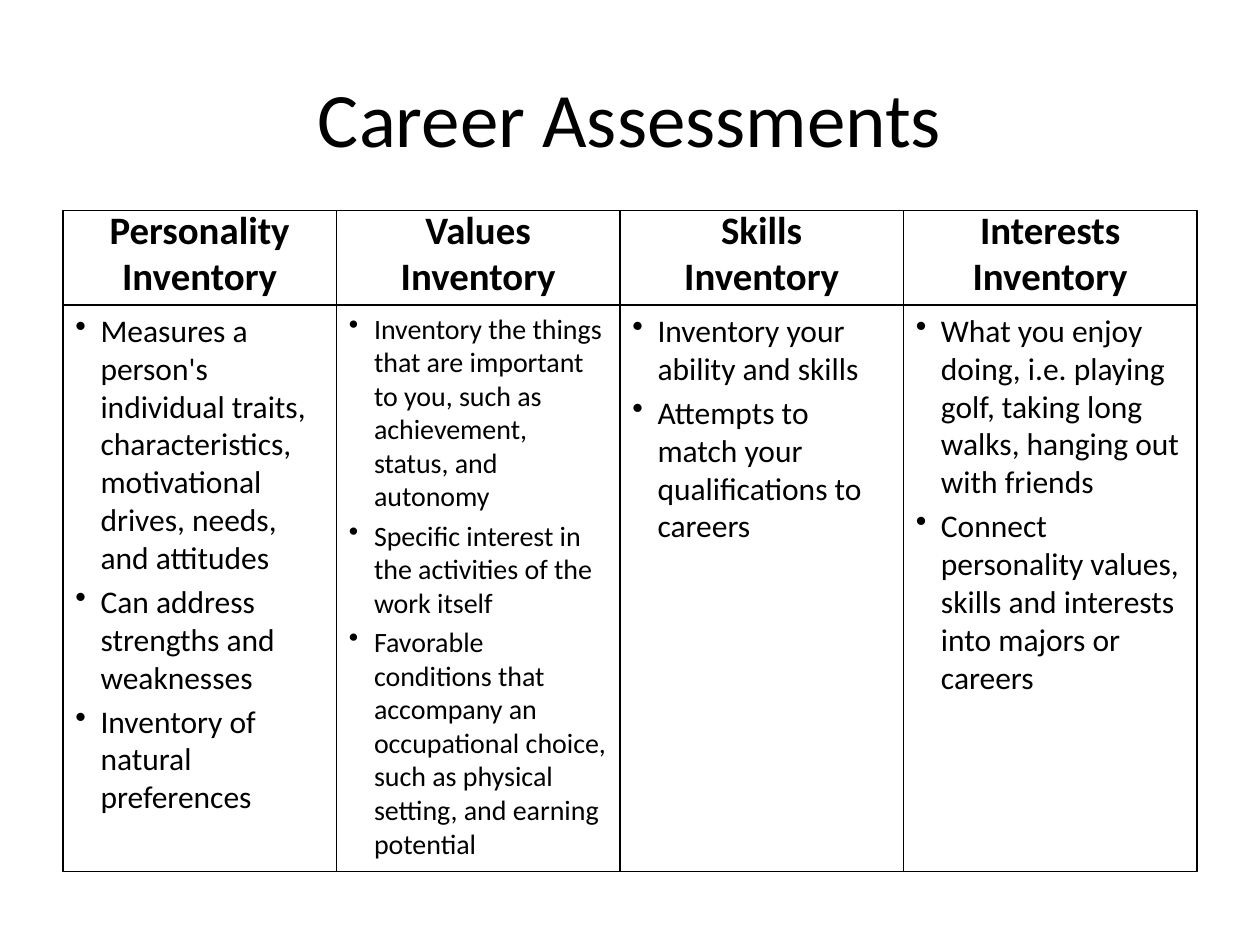
from dataclasses import dataclass
from itertools import accumulate

import pptx
import pptx.dml.color
import pptx.enum.shapes
import pptx.enum.text
import pptx.oxml.ns
import pptx.util
from lxml import etree

Inches = pptx.util.Inches
Pt = pptx.util.Pt
Align = pptx.enum.text.PP_ALIGN
Anchor = pptx.enum.text.MSO_ANCHOR


@dataclass(frozen=True)
class Theme:
    font: str = "Calibri"
    ink: pptx.dml.color.RGBColor = pptx.dml.color.RGBColor(0, 0, 0)
    title: float = 44
    heading: float = 22.2
    body: float = 18
    dense_body: float = 16
    border: float = 0.75
    space_share: float = 0.2
    hanging: float = 0.2


THEME = Theme()
SLIDE_SIZE = (10, 7.5)
MARGIN = 0.5
HEADING_TOP, HEADING_HEIGHT, BODY_HEIGHT = 1.67, 0.75, 4.5
WIDTHS = [2.17, 2.25, 2.25, 2.33]

ASSESSMENTS = [
    ("Personality Inventory", THEME.body, [
        "Measures a person's individual traits, characteristics, motivational drives, needs, and attitudes",
        "Can address strengths and weaknesses",
        "Inventory of natural preferences",
    ]),
    ("Values Inventory", THEME.dense_body, [
        "Inventory the things that are important to you, such as achievement, status, and autonomy",
        "Specific interest in the activities of the work itself",
        "Favorable conditions that accompany an occupational choice, such as physical setting, and earning potential",
    ]),
    ("Skills\vInventory", THEME.body, [
        "Inventory your ability and skills",
        "Attempts to match your qualifications to careers",
    ]),
    ("Interests Inventory", THEME.body, [
        "What you enjoy doing, i.e. playing golf, taking long walks, hanging out with friends",
        "Connect personality values, skills and interests into majors or careers",
    ]),
]


def apply_format(target, values):
    for attribute, value in values.items():
        setattr(target, attribute, value)


def format_paragraph(paragraph, size, align, bold=False):
    paragraph.alignment = align
    apply_format(paragraph.font, {"name": THEME.font, "size": Pt(size), "bold": bold})
    paragraph.font.color.rgb = THEME.ink


def add_bullet(paragraph):
    properties = paragraph._p.get_or_add_pPr()
    properties.set("marL", str(Inches(THEME.hanging)))
    properties.set("indent", str(-Inches(THEME.hanging)))
    qn = pptx.oxml.ns.qn
    bullet = etree.Element(qn("a:buChar"), char="•")
    defaults = properties.find(qn("a:defRPr"))
    if defaults is None:
        properties.append(bullet)
    else:
        defaults.addprevious(bullet)


def set_title(slide, text):
    title = slide.shapes.title
    apply_format(title, {"left": Inches(MARGIN), "top": Inches(0.3),
                         "width": Inches(SLIDE_SIZE[0] - 2 * MARGIN),
                         "height": Inches(1.25)})
    title.text_frame.text = text
    apply_format(title.text_frame, {"vertical_anchor": Anchor.MIDDLE, "word_wrap": True,
                                    "auto_size": pptx.enum.text.MSO_AUTO_SIZE.NONE})
    format_paragraph(title.text_frame.paragraphs[0], THEME.title, Align.CENTER)


def add_cell(slide, box, texts, size, heading=False):
    cell = slide.shapes.add_shape(
        pptx.enum.shapes.MSO_SHAPE.RECTANGLE, *map(Inches, box))
    cell.shadow.inherit = False
    cell.fill.background()
    cell.line.color.rgb = THEME.ink
    cell.line.width = Pt(THEME.border)
    frame = cell.text_frame
    frame.text = "\n".join(texts)
    apply_format(frame, {"word_wrap": True,
                         "vertical_anchor": Anchor.BOTTOM if heading else Anchor.TOP})
    for paragraph in frame.paragraphs:
        format_paragraph(paragraph, size, Align.CENTER if heading else Align.LEFT, heading)
        paragraph.space_before = Pt(size * THEME.space_share)
        if not heading:
            add_bullet(paragraph)


def add_assessments(slide):
    lefts = accumulate(WIDTHS[:-1], initial=MARGIN)
    body_top = HEADING_TOP + HEADING_HEIGHT
    for left, width, (heading, body_size, points) in zip(lefts, WIDTHS, ASSESSMENTS):
        add_cell(slide, (left, HEADING_TOP, width, HEADING_HEIGHT),
                 [heading], THEME.heading, heading=True)
        add_cell(slide, (left, body_top, width, BODY_HEIGHT), points, body_size)


def main():
    deck = pptx.Presentation()
    deck.slide_width, deck.slide_height = map(Inches, SLIDE_SIZE)
    slide = deck.slides.add_slide(deck.slide_layouts.get_by_name("Title Only"))
    set_title(slide, "Career Assessments")
    add_assessments(slide)
    deck.save("out.pptx")


if __name__ == "__main__":
    main()
